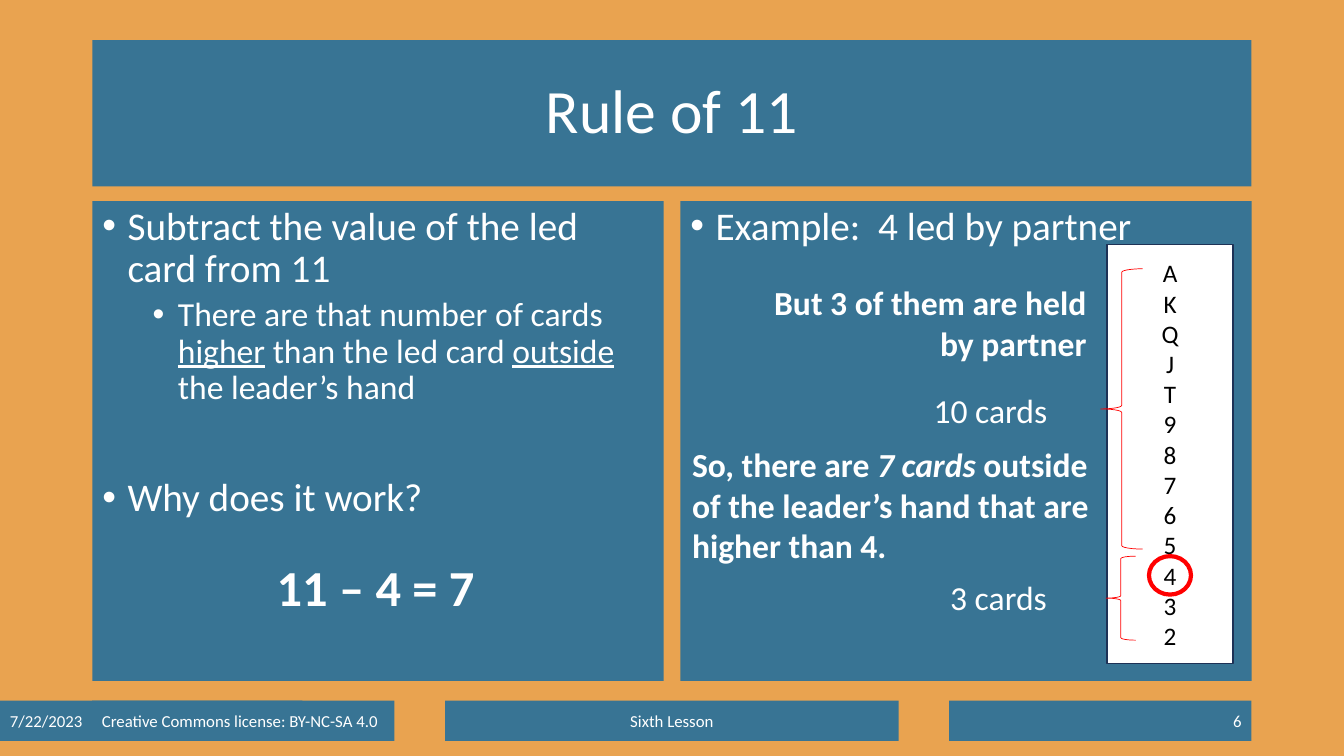
from dataclasses import dataclass

from lxml.etree import SubElement
from pptx import Presentation
from pptx.dml.color import RGBColor
from pptx.enum.shapes import MSO_SHAPE as Preset
from pptx.enum.text import MSO_ANCHOR as Anchor, PP_ALIGN as Align
from pptx.oxml.ns import qn
from pptx.util import Pt


@dataclass(frozen=True)
class Theme:
    font: str = "Calibri"
    background: RGBColor = RGBColor(0xE9, 0xA3, 0x50)
    panel: RGBColor = RGBColor(0x38, 0x74, 0x94)
    white: RGBColor = RGBColor(0xFF, 0xFF, 0xFF)
    black: RGBColor = RGBColor(0, 0, 0)
    edge: RGBColor = RGBColor(0x1E, 0x32, 0x56)
    mark: RGBColor = RGBColor(0xFF, 0, 0)
    title: int = 44
    result: int = 36
    body: int = 28
    detail: int = 24
    cards: int = 18
    footer: int = 12


THEME = Theme()


@dataclass(frozen=True)
class Frame:
    left: float
    top: float
    width: float
    height: float

    def lengths(self) -> tuple[Pt, Pt, Pt, Pt]:
        return Pt(self.left), Pt(self.top), Pt(self.width), Pt(self.height)


@dataclass(frozen=True)
class Span:
    text: str
    underline: bool = False
    italic: bool = False


@dataclass(frozen=True)
class Para:
    spans: tuple[Span, ...]
    size: int
    align: Align = Align.LEFT
    bold: bool = False
    color: RGBColor = THEME.white
    spacing: float = 1.0
    before: float = 0
    level: int = 0
    bullet: bool = False


@dataclass(frozen=True)
class Box:
    frame: Frame
    paras: tuple[Para, ...]
    anchor: Anchor = Anchor.TOP
    fill: RGBColor | None = None
    line: RGBColor | None = None


@dataclass(frozen=True)
class Mark:
    preset: Preset
    frame: Frame
    weight: float


def plain(text: str, size: int, align: Align = Align.LEFT, **look) -> Para:
    return Para((Span(text),), size, align, **look)


def bullet(*spans: Span, level: int = 0, before: float = 10) -> Para:
    size = THEME.detail if level else THEME.body
    return Para(spans, size, spacing=0.9, before=before, level=level, bullet=True)


def add_bullet(paragraph, level: int) -> None:
    properties = paragraph._p.get_or_add_pPr()
    properties.set("marL", str(Pt(18 + 36 * level)))
    properties.set("indent", str(-Pt(18)))
    SubElement(properties, qn("a:buFont")).set("typeface", "Arial")
    SubElement(properties, qn("a:buChar")).set("char", "•")


def write_para(paragraph, para: Para) -> None:
    paragraph.alignment = para.align
    paragraph.line_spacing = para.spacing
    paragraph.space_before = Pt(para.before)
    paragraph.level = para.level
    if para.bullet:
        add_bullet(paragraph, para.level)
    font = paragraph.font
    font.name, font.size, font.bold = THEME.font, Pt(para.size), para.bold
    font.color.rgb = para.color
    for span in para.spans:
        run = paragraph.add_run()
        run.text = span.text
        if span.underline:
            run.font.underline = True
        if span.italic:
            run.font.italic = True


def draw_box(page, box: Box) -> None:
    if box.fill is None:
        shape = page.shapes.add_textbox(*box.frame.lengths())
    else:
        shape = page.shapes.add_shape(Preset.RECTANGLE, *box.frame.lengths())
        shape.shadow.inherit = False
        shape.fill.solid()
        shape.fill.fore_color.rgb = box.fill
        if box.line is None:
            shape.line.fill.background()
        else:
            shape.line.color.rgb = box.line
            shape.line.width = Pt(1)
    frame = shape.text_frame
    frame.word_wrap = True
    frame.vertical_anchor = box.anchor
    for index, para in enumerate(box.paras):
        write_para(frame.add_paragraph() if index else frame.paragraphs[0], para)


def draw_mark(page, mark: Mark) -> None:
    shape = page.shapes.add_shape(mark.preset, *mark.frame.lengths())
    shape.shadow.inherit = False
    shape.fill.background()
    shape.line.color.rgb = THEME.mark
    shape.line.width = Pt(mark.weight)


def panel(frame: Frame, *paras: Para, anchor: Anchor = Anchor.TOP) -> Box:
    return Box(frame, paras, anchor, THEME.panel)


def footer(left: float, width: float, text: str, align: Align = Align.LEFT) -> Box:
    return panel(Frame(left, 500.5, width, 28.75),
                 plain(text, THEME.footer, align), anchor=Anchor.MIDDLE)


def label(frame: Frame, text: str) -> Box:
    return Box(frame, (plain(text, THEME.detail, Align.RIGHT),))


# Title and the two content panels
PANELS = (
    panel(Frame(66, 28.75, 828, 104.4),
          plain("Rule of 11", THEME.title, Align.CENTER, spacing=0.9),
          anchor=Anchor.MIDDLE),
    panel(Frame(66, 143.75, 408, 342.6),
          bullet(Span("Subtract the value of the led card from 11")),
          bullet(Span("There are that number of cards "), Span("higher", underline=True),
                 Span(" than the led card "), Span("outside", underline=True),
                 Span(" the leader’s hand"), level=1, before=5),
          bullet(Span("Why does it work?"), before=51)),
    panel(Frame(486, 143.75, 408, 342.6), bullet(Span("Example:  4 led by partner"))),
)

FOOTERS = (
    footer(318, 324, "Sixth Lesson", Align.CENTER),
    footer(678, 216, "6", Align.RIGHT),
    footer(0, 216, "7/22/2023"),
    footer(65.75, 216, "Creative Commons license: BY-NC-SA 4.0"),
)

# The suit from high to low, with the led card circled
CARDS = Box(Frame(790.75, 174.75, 90, 299.25),
            tuple(plain(card, THEME.cards, Align.CENTER, color=THEME.black)
                  for card in "AKQJT98765432"),
            Anchor.MIDDLE, THEME.white, THEME.edge)

MARKS = (
    Mark(Preset.OVAL, Frame(820.75, 397.25, 30, 27.5), 3),
    Mark(Preset.LEFT_BRACE, Frame(790, 397.25, 21.25, 60), 0.5),
    Mark(Preset.LEFT_BRACE, Frame(786.25, 192, 30, 200.25), 0.5),
)

# Card counts and the reasoning
LABELS = (
    label(Frame(668.25, 408.5, 92, 36.25), "3 cards "),
    label(Frame(645.5, 275.25, 115, 36.25), "10 cards "),
    Box(Frame(543.5, 198, 239.75, 65.5),
        (plain("But 3 of them are held by partner", THEME.detail, Align.RIGHT, bold=True),)),
    Box(Frame(487.25, 313.75, 303.75, 94.5),
        (Para((Span("So, there are "), Span("7 cards ", italic=True),
               Span("outside of the leader’s hand that are higher than 4.")),
              THEME.detail, bold=True),)),
    Box(Frame(76.5, 393.75, 383.75, 51),
        (plain("11 – 4 = 7", THEME.result, Align.CENTER, bold=True),)),
)


def main() -> None:
    deck = Presentation()
    deck.slide_width, deck.slide_height = Pt(960), Pt(540)
    page = deck.slides.add_slide(deck.slide_layouts[6])
    page.background.fill.solid()
    page.background.fill.fore_color.rgb = THEME.background
    for box in (*PANELS, *FOOTERS, CARDS):
        draw_box(page, box)
    for mark in MARKS:
        draw_mark(page, mark)
    for box in LABELS:
        draw_box(page, box)
    deck.save("out.pptx")


if __name__ == "__main__":
    main()
